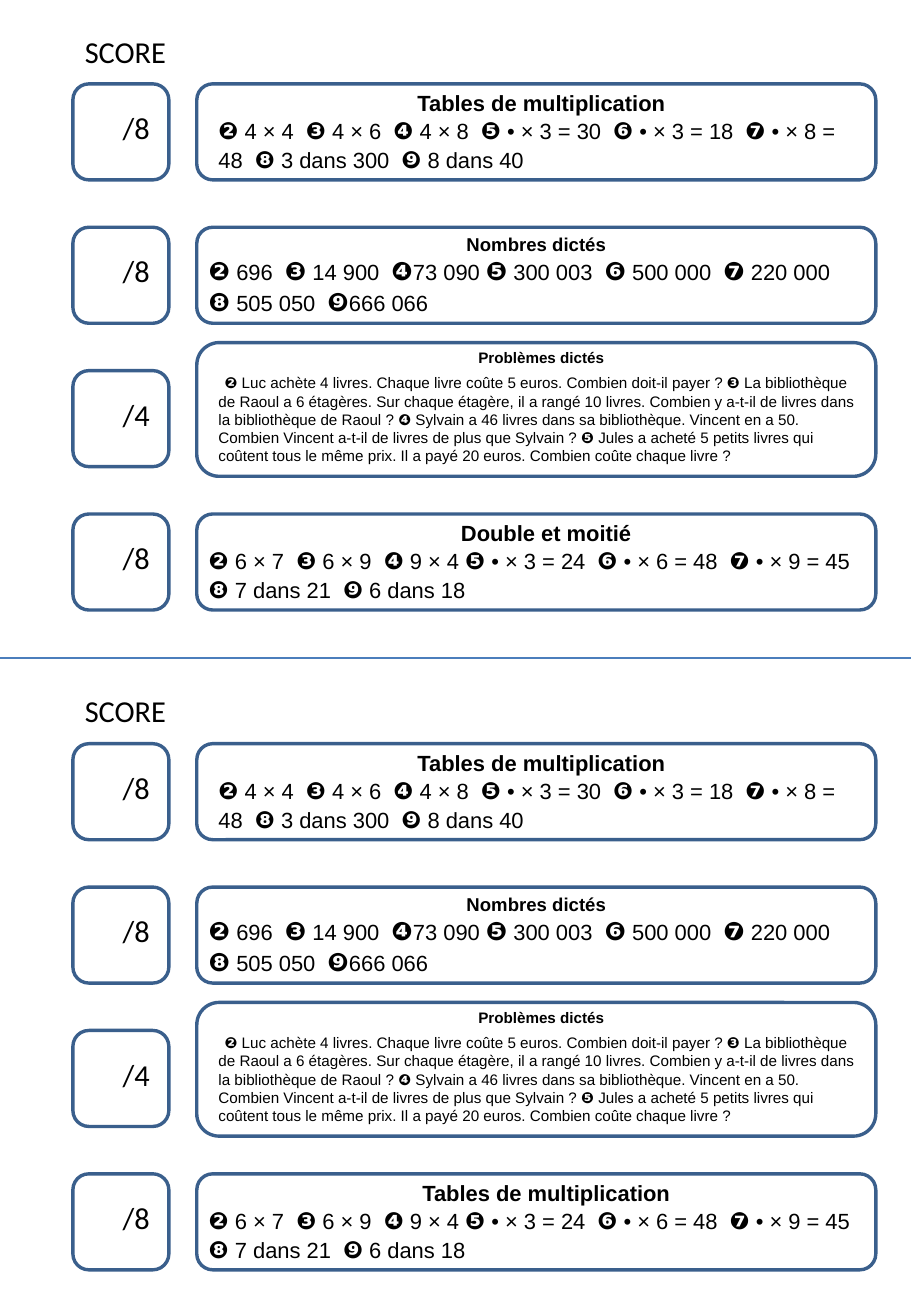
from dataclasses import dataclass
from itertools import groupby

from lxml.etree import SubElement
from pptx import Presentation
from pptx.dml.color import RGBColor
from pptx.enum.shapes import MSO_CONNECTOR, MSO_SHAPE
from pptx.enum.text import PP_ALIGN
from pptx.oxml.ns import qn
from pptx.util import Inches, Pt


@dataclass(frozen=True)
class Theme:
    ink: RGBColor = RGBColor(0, 0, 0)
    outline: RGBColor = RGBColor(0x3A, 0x5F, 0x8C)
    divider: RGBColor = RGBColor(0x4B, 0x7E, 0xBC)
    outline_width: float = 2
    divider_width: float = 0.75
    score_font: str = "Calibri"
    card_font: str = "Arial"
    score_size: int = 18
    calculation_size: int = 13


@dataclass(frozen=True)
class Exercise:
    score: str
    title: str
    lines: tuple
    text_left: float
    text_width: float
    title_size: int = 13
    marker_size: int = 14
    body_size: int = Theme.calculation_size
    height: float = 0.79
    rise: float = 0  # how far the card starts above its score box
    indent: float = 0
    space_before: int = 0


THEME = Theme()
MARKERS = "❷❸❹❺❻❼❽❾"

TABLES = Exercise(
    "/8", "Tables de multiplication",
    ("❷ 4 × 4  ❸ 4 × 6  ❹ 4 × 8  ❺ • × 3 = 30  ❻ • × 3 = 18  ❼ • × 8 = 48  "
     "❽ 3 dans 300  ❾ 8 dans 40",),
    1.7, 5.51)
NUMBERS = Exercise(
    "/8", "Nombres dictés",
    ("❷ 696  ❸ 14 900  ❹73 090 ❺ 300 003  ❻ 500 000  ❼ 220 000",
     "❽ 505 050  ❾666 066"),
    1.62, 5.59, title_size=11, marker_size=15)
PROBLEMS = Exercise(
    "/4", "Problèmes dictés",
    ("❷ Luc achète 4 livres. Chaque livre coûte 5 euros. Combien doit-il payer ? "
     "❸ La bibliothèque de Raoul a 6 étagères. Sur chaque étagère, il a rangé "
     "10 livres. Combien y a-t-il de livres dans la bibliothèque de Raoul ? "
     "❹ Sylvain a 46 livres dans sa bibliothèque. Vincent en a 50. Combien Vincent "
     "a-t-il de livres de plus que Sylvain ? "
     "❺ Jules a acheté 5 petits livres qui coûtent tous le même prix. Il a payé "
     "20 euros. Combien coûte chaque livre ?",),
    1.7, 5.51, title_size=9, marker_size=9, body_size=9,
    height=1.1, rise=0.23, indent=0.05, space_before=4)
REVIEW_LINES = (
    "❷ 6 × 7  ❸ 6 × 9  ❹ 9 × 4 ❺ • × 3 = 24  ❻ • × 6 = 48  ❼ • × 9 = 45",
    "❽ 7 dans 21  ❾ 6 dans 18")
SHEETS = [
    (TABLES, NUMBERS, PROBLEMS, Exercise("/8", title, REVIEW_LINES, 1.62, 5.75))
    for title in ("Double et moitié", "Tables de multiplication")
]

SLIDE_WIDTH, SLIDE_HEIGHT = 7.5, 10.83
SHEET_PITCH, ROW_PITCH = 5.43, 1.18
HEADING_TOP, FIRST_ROW_TOP = 0.22, 0.69
SCORE_LEFT, SCORE_SIDE = 0.6, 0.79
CARD_LEFT, CARD_WIDTH = 1.62, 5.59


def add_outline(slide, left, top, width, height):
    shape = slide.shapes.add_shape(
        MSO_SHAPE.FLOWCHART_ALTERNATE_PROCESS,
        Inches(left), Inches(top), Inches(width), Inches(height))
    shape.shadow.inherit = False
    shape.fill.background()
    shape.line.color.rgb = THEME.outline
    shape.line.width = Pt(THEME.outline_width)


def add_text_frame(slide, left, top, width, height):
    box = slide.shapes.add_textbox(
        Inches(left), Inches(top), Inches(width), Inches(height))
    box.text_frame.word_wrap = True
    return box.text_frame


def style_paragraph(paragraph, font_name, size, bold=False):
    paragraph.font.name = font_name
    paragraph.font.size = Pt(size)
    paragraph.font.bold = bold
    paragraph.font.color.rgb = THEME.ink


def add_label(slide, text, left, top, width, margin_left=0.1):
    frame = add_text_frame(slide, left, top, width, 0.4)
    frame.margin_left = Inches(margin_left)
    frame.text = text
    style_paragraph(frame.paragraphs[0], THEME.score_font, THEME.score_size)


def add_questions(paragraph, line, exercise):
    """Write one line, with its circled numbers bold and in their own size."""
    style_paragraph(paragraph, THEME.card_font, exercise.body_size)
    paragraph.space_before = Pt(exercise.space_before)
    if exercise.indent:
        properties = paragraph._p.get_or_add_pPr()
        properties.set("marL", "0")
        properties.set("indent", str(Inches(exercise.indent)))
    for is_marker, characters in groupby(line, lambda character: character in MARKERS):
        run = paragraph.add_run()
        run.text = "".join(characters)
        if is_marker:
            run.font.bold = True
            run.font.size = Pt(exercise.marker_size)


def add_exercise(slide, exercise, top):
    add_outline(slide, SCORE_LEFT, top, SCORE_SIDE, SCORE_SIDE)
    add_label(slide, exercise.score, SCORE_LEFT + 0.08, top + 0.16, SCORE_SIDE,
              margin_left=0.33)

    card_top = top - exercise.rise
    add_outline(slide, CARD_LEFT, card_top, CARD_WIDTH, exercise.height)
    frame = add_text_frame(slide, exercise.text_left, card_top,
                           exercise.text_width, exercise.height)
    frame.text = exercise.title
    title = frame.paragraphs[0]
    title.alignment = PP_ALIGN.CENTER
    style_paragraph(title, THEME.card_font, exercise.title_size, bold=True)
    for line in exercise.lines:
        add_questions(frame.add_paragraph(), line, exercise)


def add_divider(slide):
    middle = Inches(SLIDE_HEIGHT / 2)
    divider = slide.shapes.add_connector(
        MSO_CONNECTOR.STRAIGHT, 0, middle, Inches(SLIDE_WIDTH), middle)
    divider.line.color.rgb = THEME.divider
    divider.line.width = Pt(THEME.divider_width)
    SubElement(divider._element.spPr, qn("a:effectLst"))


def main():
    presentation = Presentation()
    presentation.slide_width = Inches(SLIDE_WIDTH)
    presentation.slide_height = Inches(SLIDE_HEIGHT)
    slide = presentation.slides.add_slide(presentation.slide_layouts[6])
    add_divider(slide)
    for sheet_index, exercises in enumerate(SHEETS):
        sheet_top = sheet_index * SHEET_PITCH
        add_label(slide, "SCORE", SCORE_LEFT, sheet_top + HEADING_TOP, 1.34)
        for row, exercise in enumerate(exercises):
            add_exercise(slide, exercise, sheet_top + FIRST_ROW_TOP + row * ROW_PITCH)
    presentation.save("out.pptx")


if __name__ == "__main__":
    main()
